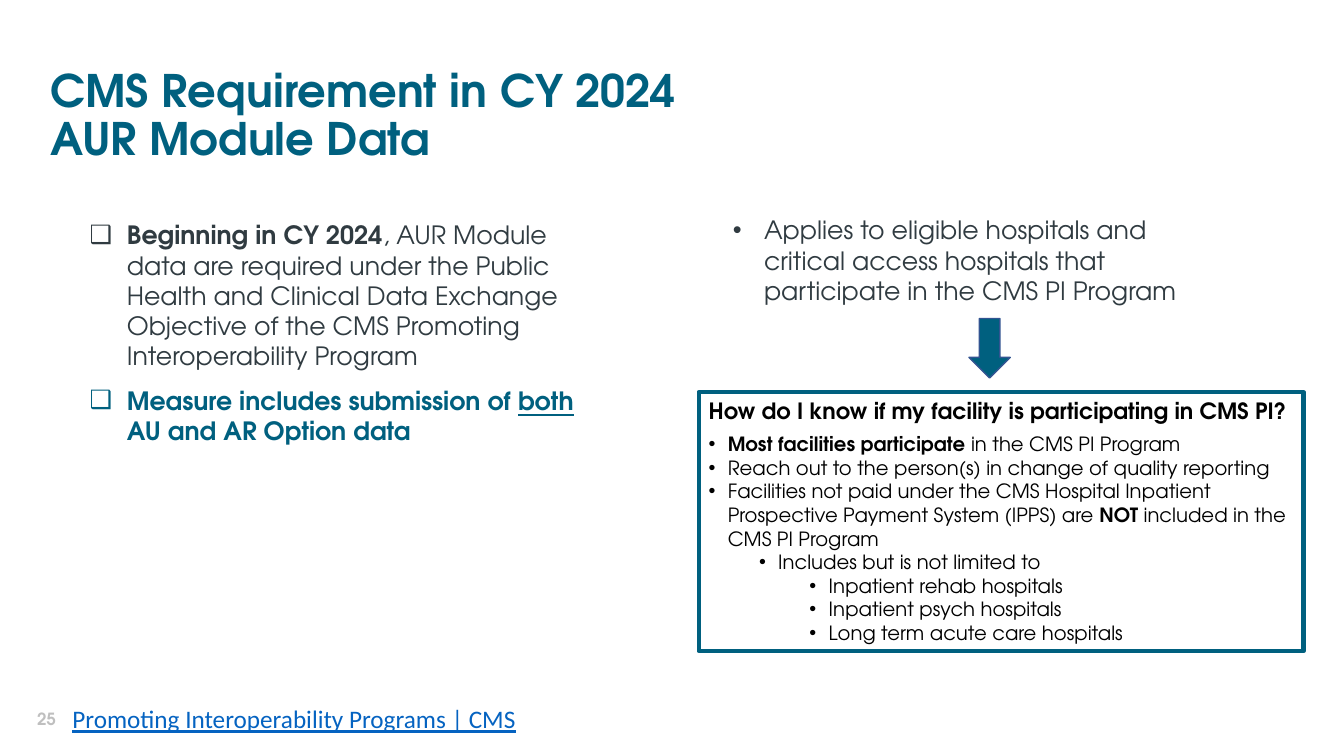
"""Build the slide on the CMS requirement for AUR Module data."""
from lxml.etree import SubElement
from pptx import Presentation
from pptx.dml.color import RGBColor
from pptx.enum.shapes import MSO_SHAPE
from pptx.enum.text import MSO_ANCHOR, PP_ALIGN
from pptx.oxml.ns import qn
from pptx.util import Inches, Pt

FONT = "TeX Gyre Adventor"
TEAL, SLATE, BLACK = "00607F", "303B41", "000000"
GREY, LINK, EDGE = "BFBFBF", "0563C1", "325491"

TITLE = ["CMS Requirement in CY 2024", "AUR Module Data"]
RULE = [
    ("Beginning in CY 2024", {"bold": True}),
    (", AUR Module data are required under the Public Health and Clinical "
     "Data Exchange Objective of the CMS Promoting Interoperability Program", {}),
]
MEASURE = [
    ("Measure includes submission of ", {}),
    ("both", {"underline": True}),
    (" AU and AR Option data", {}),
]
SCOPE = ("Applies to eligible hospitals and critical access hospitals "
         "that participate in the CMS PI Program")
ASK = "How do I know if my facility is participating in CMS PI?"
FACTS = [
    (0, [("Most facilities participate ", {"bold": True}),
         ("in the CMS PI Program", {})]),
    (0, "Reach out to the person(s) in change of quality reporting"),
    (0, [("Facilities not paid under the CMS Hospital Inpatient Prospective "
          "Payment System (IPPS) are ", {}),
         ("NOT", {"bold": True}),
         (" included in the CMS PI Program", {})]),
    (1, "Includes but is not limited to"),
    (2, "Inpatient rehab hospitals"),
    (2, "Inpatient psych hospitals"),
    (2, "Long term acute care hospitals"),
]

deck = Presentation()
deck.slide_width, deck.slide_height = Inches(13.33), Inches(7.5)
slide = deck.slides.add_slide(deck.slide_layouts[6])


def color(code):
    """Turn a hex string into a colour."""
    return RGBColor.from_string(code)


def frame(*at):
    """Add a wrapping text box and return its text frame."""
    box = slide.shapes.add_textbox(*map(Inches, at))
    box.text_frame.word_wrap = True
    return box.text_frame


def shape(kind, at, line, width, fill=None):
    """Add a flat preset shape."""
    item = slide.shapes.add_shape(kind, *map(Inches, at))
    item.shadow.inherit = False
    item.line.color.rgb, item.line.width = color(line), Pt(width)
    if fill:
        item.fill.solid()
        item.fill.fore_color.rgb = color(fill)
    else:
        item.fill.background()
    return item


def write(body, text, size, ink, font=FONT, bold=False, underline=False,
          mark=None, left=0, hang=0, level=0, lead=None, before=0, after=0):
    """Append a paragraph of plain text or of (text, format) runs."""
    para = body.paragraphs[0]
    if para.runs:
        para = body.add_paragraph()
    para.level, para.alignment = level, PP_ALIGN.LEFT
    para.space_before, para.space_after = Pt(before), Pt(after)
    if lead:
        para.line_spacing = lead
    if mark:
        props = para._p.get_or_add_pPr()
        props.set("marL", str(Inches(left)))
        props.set("indent", str(-Inches(hang)))
        SubElement(props, qn("a:buFont")).set("typeface", "Arial")
        SubElement(props, qn("a:buChar")).set("char", mark)
    for words, style in [(text, {})] if isinstance(text, str) else text:
        run = para.add_run()
        run.text = words
        face = run.font
        face.name, face.size, face.color.rgb = font, Pt(size), color(ink)
        face.bold = style.get("bold", bold)
        face.underline = style.get("underline", underline)


duty = frame(0.79, 2.13, 5.38, 4.28)
check = dict(mark="❑", left=0.37, hang=0.37)
write(duty, RULE, 18, SLATE, **check)
write(duty, MEASURE, 18, TEAL, bold=True, before=10, **check)

title = frame(0.5, 0.68, 12, 1.17)
title.margin_left = title.margin_right = title.margin_top = title.margin_bottom = 0
for row in TITLE:
    write(title, row, 32, TEAL, bold=True, lead=0.9)

page = frame(0.27, 6.93, 3, 0.4)
page.vertical_anchor = MSO_ANCHOR.MIDDLE
write(page, "25", 12, GREY, bold=True)

write(frame(7.17, 2.08, 4.9, 1.01), SCOPE, 18, SLATE,
      mark="•", left=0.31, hang=0.31)
write(frame(0.62, 6.93, 6.67, 0.4), "Promoting Interoperability Programs | CMS",
      18, LINK, font="Calibri", underline=True)

panel = shape(MSO_SHAPE.RECTANGLE, (6.93, 3.89, 6, 2.57), TEAL, 3).text_frame
panel.word_wrap, panel.vertical_anchor = True, MSO_ANCHOR.TOP
write(panel, ASK, 16, BLACK, bold=True, after=6)
for level, text in FACTS:
    write(panel, text, 14, BLACK, mark="•", level=level,
          left=0.19 + level * 0.5, hang=0.19)

arrow = shape(MSO_SHAPE.LEFT_ARROW, (9.52, 3.25, 0.59, 0.41), EDGE, 1, TEAL)
arrow.rotation = 270

deck.save("out.pptx")
